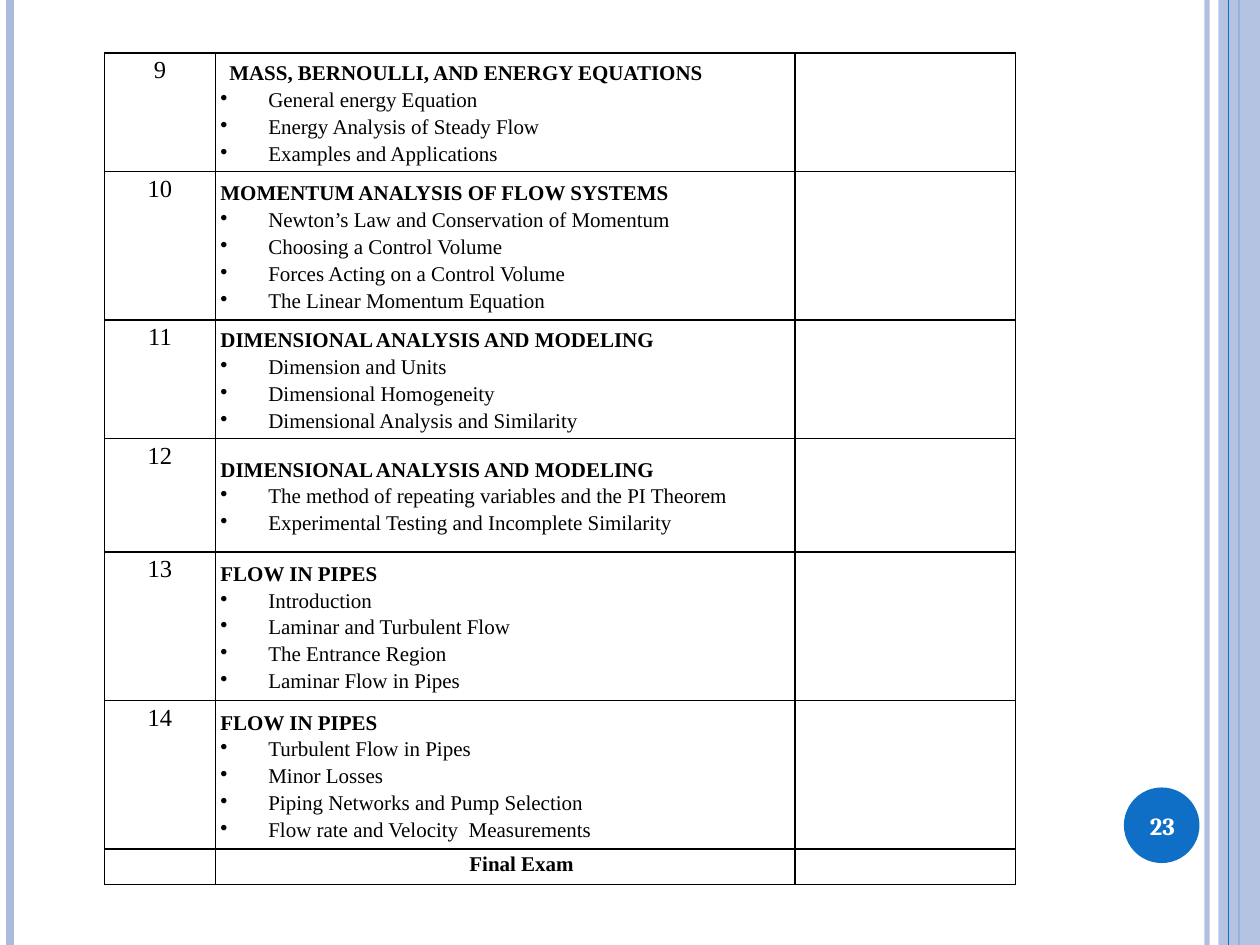
"""Build the course schedule slide for weeks 9 to 14 and the final exam."""
from lxml import etree
from pptx import Presentation
from pptx import util as u
from pptx.dml.color import RGBColor
from pptx.enum import shapes, text
from pptx.oxml import ns

BLACK = RGBColor(0x00, 0x00, 0x00)
WHITE = RGBColor(0xFF, 0xFF, 0xFF)
BLUE = RGBColor(0x0F, 0x6F, 0xC6)
LAVENDER = RGBColor(0xAB, 0xBB, 0xDF)

WEEKS = [
    ("9", "MASS, BERNOULLI, AND ENERGY EQUATIONS",
     ["General energy Equation", "Energy Analysis of Steady Flow",
      "Examples and Applications"]),
    ("10", "MOMENTUM ANALYSIS OF FLOW SYSTEMS",
     ["Newton’s Law and Conservation of Momentum", "Choosing a Control Volume",
      "Forces Acting on a Control Volume", "The Linear Momentum Equation"]),
    ("11", "DIMENSIONAL ANALYSIS AND MODELING",
     ["Dimension and Units", "Dimensional Homogeneity",
      "Dimensional Analysis and Similarity"]),
    ("12", "DIMENSIONAL ANALYSIS AND MODELING",
     ["The method of repeating variables and the PI Theorem",
      "Experimental Testing and Incomplete Similarity"]),
    ("13", "FLOW IN PIPES",
     ["Introduction", "Laminar and Turbulent Flow", "The Entrance Region",
      "Laminar Flow in Pipes"]),
    ("14", "FLOW IN PIPES",
     ["Turbulent Flow in Pipes", "Minor Losses",
      "Piping Networks and Pump Selection",
      "Flow rate and Velocity  Measurements"]),
]
COLUMN_WIDTHS = [0.88, 4.6, 1.75]
ROW_HEIGHTS = [0.94, 1.18, 0.94, 0.9, 1.18, 1.18, 0.28]


def add_child(parent, tag, **attributes):
    return etree.SubElement(parent, ns.qn(tag), attributes)


def write(para, words, size=12, bold=False, space=0, align=None, left=0, first=0, bullet=None):
    para.text = words
    para.alignment = align
    para.line_spacing = 1.15
    para.space_before = para.space_after = u.Pt(space)
    properties = para._p.get_or_add_pPr()
    properties.set("marL", str(u.Inches(left)))
    properties.set("indent", str(u.Inches(first)))
    if bullet:
        add_child(properties, "a:buChar", char=bullet)
    para.font.name = "Times New Roman"
    para.font.size = u.Pt(size)
    para.font.bold = bold
    para.font.color.rgb = BLACK


deck = Presentation()
deck.slide_width, deck.slide_height = u.Inches(10), u.Inches(7.5)
page = deck.slides.add_slide(deck.slide_layouts[6])

rails = {}
for x, color, width in [(9.58, LAVENDER, 3), (0.08, LAVENDER, 4.5), (9.83, BLUE, 1.5)]:
    rail = page.shapes.add_connector(
        shapes.MSO_CONNECTOR.STRAIGHT, u.Inches(x), 0, u.Inches(x), deck.slide_height)
    rail.line.color.rgb = color
    rail.line.width = u.Pt(width)
    add_child(rail._element.spPr, "a:effectLst")
    rails[x] = rail
rail_color = rails[9.58]._element.spPr.find(".//" + ns.qn("a:srgbClr"))
add_child(rail_color, "a:alpha", val="93000")

band = page.shapes.add_shape(
    shapes.MSO_SHAPE.RECTANGLE, u.Inches(9.67), 0, u.Inches(0.33), deck.slide_height)
band.shadow.inherit = False
band.fill.solid()
band.fill.fore_color.rgb = LAVENDER
band.line.fill.background()
add_child(band._element.spPr.find(".//" + ns.qn("a:srgbClr")), "a:alpha", val="87000")
rails[9.83].begin_connect(band, 0)
rails[9.83].end_connect(band, 2)

stripe = page.shapes.add_connector(
    shapes.MSO_CONNECTOR.STRAIGHT, u.Inches(9.75), 0, u.Inches(9.75), deck.slide_height)
stripe.line.color.rgb = BLUE
stripe.line.width = u.Pt(0.75)
add_child(stripe._element.spPr, "a:effectLst")

disc = page.shapes.add_shape(
    shapes.MSO_SHAPE.OVAL, u.Inches(8.92), u.Inches(6.25), u.Inches(0.6), u.Inches(0.6))
disc.shadow.inherit = False
disc.fill.solid()
disc.fill.fore_color.rgb = BLUE
disc.line.fill.background()

schedule = page.shapes.add_table(
    len(ROW_HEIGHTS), len(COLUMN_WIDTHS), u.Inches(0.83), u.Inches(0.42),
    u.Inches(sum(COLUMN_WIDTHS)), u.Inches(sum(ROW_HEIGHTS))).table
schedule.first_row = schedule.horz_banding = False
for column, width in zip(schedule.columns, COLUMN_WIDTHS):
    column.width = u.Inches(width)
for row, height in zip(schedule.rows, ROW_HEIGHTS):
    row.height = u.Inches(height)

for cell in schedule.iter_cells():
    cell.margin_left = cell.margin_right = u.Inches(0.04)
    cell.margin_top = cell.margin_bottom = 0
    cell.text_frame.paragraphs[0].font.size = u.Pt(12)
    properties = cell._tc.get_or_add_tcPr()
    for side in ("a:lnL", "a:lnR", "a:lnT", "a:lnB"):
        border = add_child(properties, side, w=str(u.Pt(1)))
        add_child(add_child(border, "a:solidFill"), "a:srgbClr", val=str(BLACK))
    cell.fill.background()

for index, (week, heading, topics) in enumerate(WEEKS):
    write(schedule.cell(index, 0).text_frame.paragraphs[0], week, size=14, space=6,
          align=text.PP_ALIGN.CENTER)
    cell = schedule.cell(index, 1)
    cell.vertical_anchor = text.MSO_ANCHOR.MIDDLE
    write(cell.text_frame.paragraphs[0], heading, bold=True, left=0.07 if index == 0 else 0)
    for topic in topics:
        write(cell.text_frame.add_paragraph(), topic, left=0.38, first=-0.38, bullet="•")
write(schedule.cell(len(WEEKS), 1).text_frame.paragraphs[0], "Final Exam", bold=True,
      space=3, align=text.PP_ALIGN.CENTER, first=0.26)

box = page.shapes.add_textbox(u.Inches(8.89), u.Inches(6.27), u.Inches(0.67), u.Inches(0.57))
box.text_frame.word_wrap = True
box.text_frame.vertical_anchor = text.MSO_ANCHOR.MIDDLE
para = box.text_frame.paragraphs[0]
para.text = "23"
para.alignment = text.PP_ALIGN.CENTER
para.font.name = "Cambria"
para.font.size = u.Pt(14)
para.font.bold = True
para.font.color.rgb = WHITE

deck.save("out.pptx")
